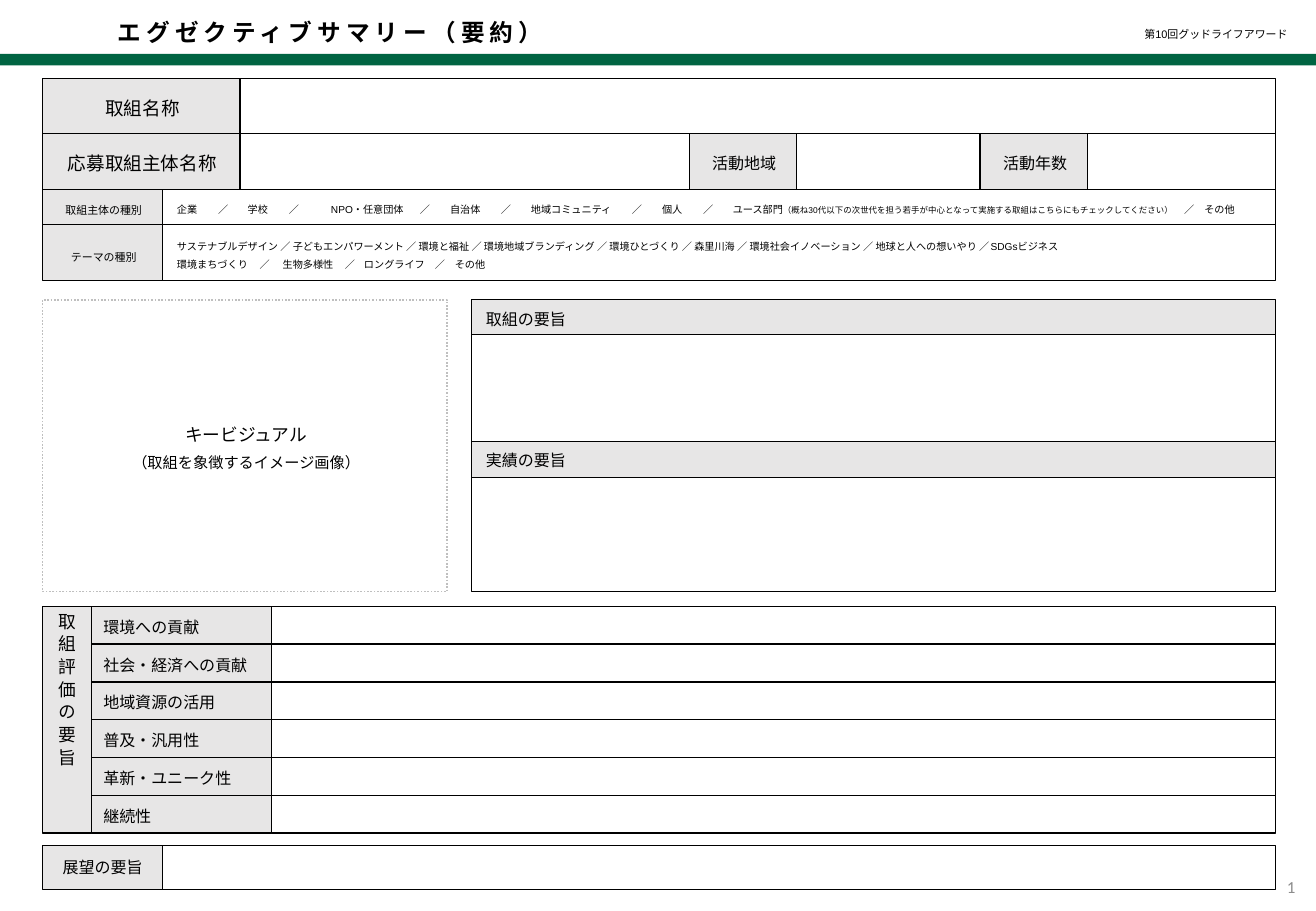
from itertools import pairwise

from pptx import Presentation
from pptx.dml.color import RGBColor
from pptx.enum.dml import MSO_LINE
from pptx.enum.shapes import MSO_SHAPE
from pptx.enum.text import MSO_ANCHOR, PP_ALIGN
from pptx.oxml.ns import qn
from pptx.util import Cm, Pt
from lxml.etree import SubElement

GREEN, GREY, WHITE, BLACK = "006442", "E7E6E6", "FFFFFF", "000000"
DOTTED, PAGE_GREY = "BFBFBF", "8C8C8C"

TITLE = "エグゼクティブサマリー（要約）"
AWARD = "第10回グッドライフアワード"
APPLICANTS = ["企業", "学校", "NPO・任意団体", "自治体", "地域コミュニティ", "個人", "ユース部門"]
YOUTH_NOTE = "（概ね30代以下の次世代を担う若手が中心となって実施する取組はこちらにもチェックしてください）"
THEMES = ["サステナブルデザイン", "子どもエンパワーメント", "環境と福祉", "環境地域ブランディング",
          "環境ひとづくり", "森里川海", "環境社会イノベーション", "地球と人への想いやり", "SDGsビジネス"]
MORE_THEMES = ["環境まちづくり", "生物多様性", "ロングライフ", "その他"]
KEY_VISUAL = ["キービジュアル", "（取組を象徴するイメージ画像）"]
SUMMARIES = ["取組の要旨", "実績の要旨"]
EVALUATION = "取組評価の要旨"
CRITERIA = ["環境への貢献", "社会・経済への貢献", "地域資源の活用", "普及・汎用性",
            "革新・ユニーク性", "継続性"]
OUTLOOK = "展望の要旨"

# Layout in centimetres
LEFT, RIGHT = 0.89, 26.66
KIND_X = 3.4
NAME_X = 5.02
NAME_Y, ENTITY_Y, KIND_Y, THEME_Y, THEME_END = 1.64, 2.8, 3.96, 4.69, 5.86
ENTITY_XS = [LEFT, NAME_X, 14.41, 16.65, 20.49, 22.74, RIGHT]
ENTITY_LABELS = [("応募取組主体名称", 11), None, ("活動地域", 9.5), None, ("活動年数", 9.5), None]
VISUAL_W, PANEL_X = 8.46, 9.86
PANEL_YS = [6.27, 6.99, 9.23, 9.98, 12.37]
CRITERIA_X, ANSWER_X, CRITERIA_Y, CRITERION_H = 1.91, 5.68, 12.68, 0.79
OUTLOOK_Y, OUTLOOK_H = 17.68, 0.92
APPLICANT_TABS = [0.86, 1.48, 2.34, 3.22, 5.08, 5.71, 6.77, 7.4, 9.51, 10.14, 11, 11.62]
THEME_TABS = [1.73, 2.21, 3.51, 3.91, 5.39, 5.81]

LABEL_INS = (0.3, 0.2, 0.25, 0.13)
CRITERION_INS = (0.25, 0.2, 0.25, 0.13)
SMALL_INS = (0.3, 0.3, 0.25, 0.13)

prs = Presentation()
prs.slide_width, prs.slide_height = Cm(27.51), Cm(19.05)
s = prs.slides.add_slide(prs.slide_layouts[6])


def rgb(value):
    return RGBColor.from_string(value)


def write(sp, paras, size=9.5, color=BLACK, font="Arial", bold=False, align=PP_ALIGN.CENTER,
          anchor=MSO_ANCHOR.MIDDLE, ins=LABEL_INS, spacing=None, gap=0, lines=(), tabs=()):
    """Fill a shape; a paragraph is a string or a list of (text, size) runs.

    lines and tabs hold one entry for each paragraph.
    """
    tf = sp.text_frame
    tf.word_wrap = True
    tf.vertical_anchor = anchor
    tf.margin_left, tf.margin_top, tf.margin_right, tf.margin_bottom = map(Cm, ins)
    for i, para in enumerate(paras):
        p = tf.add_paragraph() if i else tf.paragraphs[0]
        p.alignment = align
        if i and gap:
            p.space_before = Pt(gap)
        if lines:
            p.line_spacing = lines[i]
        if tabs:
            stops = SubElement(p._p.get_or_add_pPr(), qn("a:tabLst"))
            for pos in tabs[i]:
                SubElement(stops, qn("a:tab"), pos=str(Cm(pos)), algn="l")
        for text, run_size in [(para, size)] if isinstance(para, str) else para:
            r = p.add_run()
            r.text = text
            r.font.size, r.font.name, r.font.bold = Pt(run_size), font, bold
            r.font.color.rgb = rgb(color)
            if spacing:
                r._r.get_or_add_rPr().set("spc", str(spacing * 100))


def box(x, y, right, bottom, fill=WHITE, line=BLACK, width=0.75):
    sp = s.shapes.add_shape(MSO_SHAPE.RECTANGLE, Cm(x), Cm(y), Cm(right - x), Cm(bottom - y))
    sp.shadow.inherit = False
    sp.fill.solid()
    sp.fill.fore_color.rgb = rgb(fill)
    if line:
        sp.line.color.rgb = rgb(line)
        sp.line.width = Pt(width)
    else:
        sp.line.fill.background()
    return sp


def label(x, y, right, bottom, text, **fmt):
    write(box(x, y, right, bottom, GREY), [text], **fmt)


def textbox(x, y, w, h, text, **fmt):
    write(s.shapes.add_textbox(Cm(x), Cm(y), Cm(w), Cm(h)), [text], **fmt)


# Header and page number
box(0, 1.13, 27.51, 1.37, GREEN, None)
textbox(25.73, 18.03, 1.6, 1.02, "1", size=10, color=PAGE_GREY, font="Calibri",
        align=PP_ALIGN.RIGHT, ins=(0.25, 0.13, 0.25, 0.13))
textbox(23.44, 0.3, 3.73, 0.69, AWARD, size=6.5, align=PP_ALIGN.RIGHT,
        anchor=MSO_ANCHOR.BOTTOM, ins=(0.25, 0.2, 0.25, 0.2), lines=[0.9])
textbox(2.26, 0.41, 11.5, 0.69, TITLE, size=14, bold=True, spacing=3, align=PP_ALIGN.LEFT,
        anchor=MSO_ANCHOR.BOTTOM, ins=(0.2, 0.2, 0.25, 0.13), lines=[0.9])

# Applicant
label(LEFT, NAME_Y, NAME_X, ENTITY_Y, "取組名称", size=11)
box(NAME_X, NAME_Y, RIGHT, ENTITY_Y)
for (x, right), entry in zip(pairwise(ENTITY_XS), ENTITY_LABELS):
    if entry:
        label(x, ENTITY_Y, right, KIND_Y, entry[0], size=entry[1])
    else:
        box(x, ENTITY_Y, right, KIND_Y)

small = dict(anchor=MSO_ANCHOR.TOP, ins=SMALL_INS)
label(LEFT, KIND_Y, KIND_X, THEME_Y, "取組主体の種別", size=6.5, **small)
write(box(KIND_X, KIND_Y, RIGHT, THEME_Y),
      [[("\t／\t".join(APPLICANTS), 6), (YOUTH_NOTE, 5), ("　／　その他", 6)]],
      align=PP_ALIGN.LEFT, tabs=[APPLICANT_TABS], **small)
label(LEFT, THEME_Y, KIND_X, THEME_END, "テーマの種別", size=6.5, lines=[Pt(15)], **small)
write(box(KIND_X, THEME_Y, RIGHT, THEME_END),
      [" ／ ".join(THEMES), "\t／\t".join(MORE_THEMES)], size=6,
      align=PP_ALIGN.LEFT, lines=[Pt(8), 1.5], tabs=[[], THEME_TABS], **small)

# Key visual and summaries
visual = box(LEFT, PANEL_YS[0], LEFT + VISUAL_W, PANEL_YS[-1], line=DOTTED, width=1)
visual.line.dash_style = MSO_LINE.ROUND_DOT
write(visual, [[(KEY_VISUAL[0], 10.5)], [(KEY_VISUAL[1], 9)]], gap=4.8)
for i, text in enumerate(SUMMARIES):
    top, body, bottom = PANEL_YS[2 * i:2 * i + 3]
    label(PANEL_X, top, RIGHT, body, text, align=PP_ALIGN.LEFT, anchor=MSO_ANCHOR.TOP)
    box(PANEL_X, body, RIGHT, bottom)

# Evaluation
criteria_end = CRITERIA_Y + CRITERION_H * len(CRITERIA)
evaluation = box(LEFT, CRITERIA_Y, CRITERIA_X, criteria_end, GREY)
write(evaluation, [EVALUATION], size=10.5, font="Calibri", spacing=3,
      ins=(0.25, 0.13, 0.25, 0.13))
evaluation.text_frame._txBody.bodyPr.set("vert", "eaVert")
for i, text in enumerate(CRITERIA):
    y = CRITERIA_Y + CRITERION_H * i
    label(CRITERIA_X, y, ANSWER_X, y + CRITERION_H, text, align=PP_ALIGN.LEFT, ins=CRITERION_INS)
    box(ANSWER_X, y, RIGHT, y + CRITERION_H)

# Outlook
label(LEFT, OUTLOOK_Y, KIND_X, OUTLOOK_Y + OUTLOOK_H, OUTLOOK, ins=(0.25, 0, 0.25, 0))
box(KIND_X, OUTLOOK_Y, RIGHT, OUTLOOK_Y + OUTLOOK_H)

prs.save("out.pptx")
